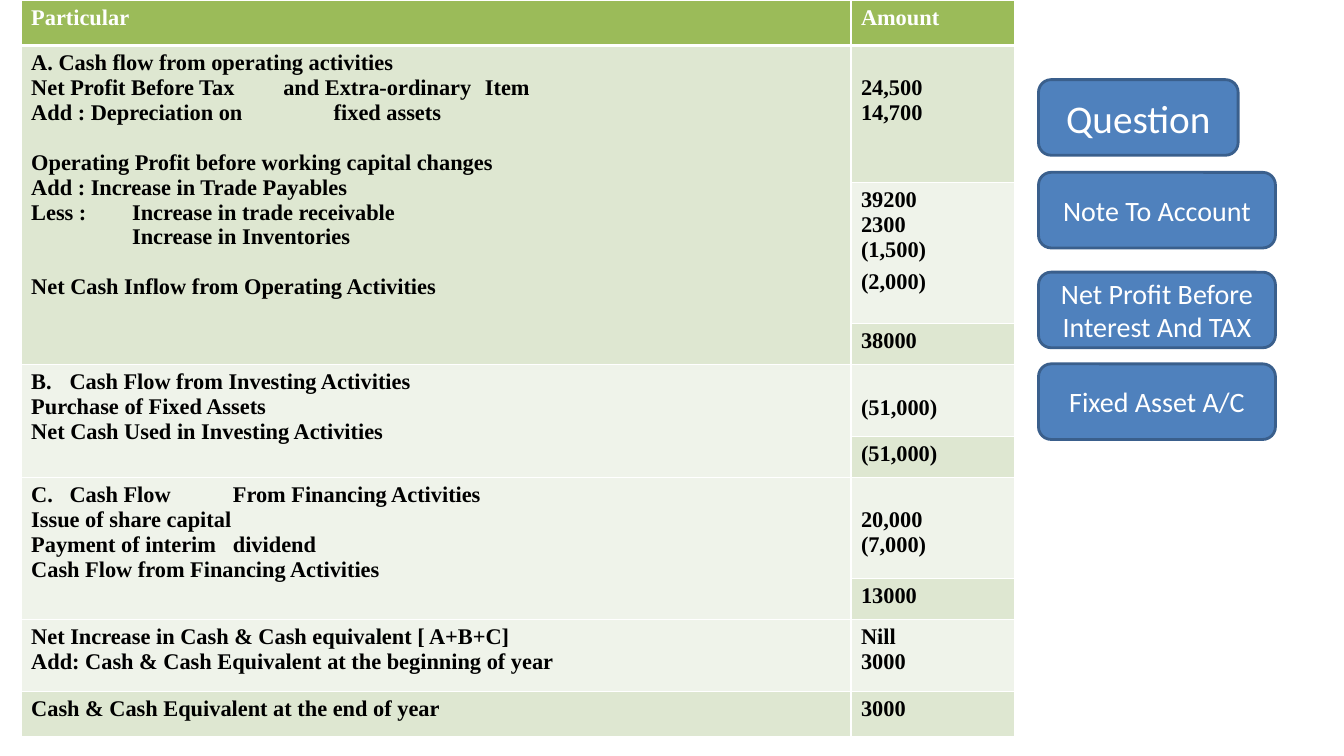
import pptx
import pptx.util
import pptx.dml.color
import pptx.enum.shapes
import pptx.enum.text
import pptx.oxml.ns
import lxml.etree

Inches = pptx.util.Inches
Pt = pptx.util.Pt
COLORS = {
    "header": "9BBB59", "dark": "DEE7D1", "light": "EFF3EA",
    "button": "4F81BD", "outline": "3A5F8C", "white": "FFFFFF", "black": "000000",
}
LINE_GAP = 18  # height of one skipped text line, in points


def color(name):
    return pptx.dml.color.RGBColor.from_string(COLORS[name])


def add_element(parent, tag, **attributes):
    element = lxml.etree.SubElement(parent, pptx.oxml.ns.qn(tag))
    for name, value in attributes.items():
        element.set(name, str(value))
    return element


presentation = pptx.Presentation()
presentation.slide_width = Inches(13.33)
presentation.slide_height = Inches(7.5)
slide = presentation.slides.add_slide(presentation.slide_layouts[6])

# Cash flow statement: row, column, rows spanned, fill, skipped lines on top, lines
# A line is its text plus optional settings: tabs (inches), before, after, number
CELLS = [
    (0, 0, 1, "header", 0, [("Particular", {})]),
    (0, 1, 1, "header", 0, [("Amount", {})]),
    (1, 0, 3, "dark", 0, [
        ("A. Cash flow from operating activities", {}),
        ("Net Profit Before Tax\tand Extra-ordinary\tItem", {"tabs": [2.5, 4.5]}),
        ("Add : Depreciation on\tfixed assets", {"tabs": [3]}),
        ("Operating Profit before working capital changes", {"before": LINE_GAP}),
        ("Add : Increase in Trade Payables", {}),
        ("Less :\tIncrease in trade receivable", {"tabs": [1]}),
        ("\tIncrease in Inventories", {"tabs": [1]}),
        ("Net Cash Inflow from Operating Activities", {"before": LINE_GAP}),
    ]),
    (1, 1, 1, "dark", 1, [("24,500", {}), ("14,700", {})]),
    (2, 1, 1, "light", 0, [("39200", {}), ("2300", {}),
                           ("(1,500)", {"after": 5.2}), ("(2,000)", {})]),
    (3, 1, 1, "dark", 0, [("38000", {})]),
    (4, 0, 2, "light", 0, [
        ("Cash Flow from Investing Activities", {"number": 2}),
        ("Purchase of Fixed Assets", {}),
        ("Net Cash Used in Investing Activities", {}),
    ]),
    (4, 1, 1, "light", 1, [("(51,000)", {})]),
    (5, 1, 1, "dark", 0, [("(51,000)", {})]),
    (6, 0, 2, "light", 0, [
        ("Cash Flow\tFrom Financing Activities", {"number": 3, "tabs": [2]}),
        ("Issue of share capital", {}),
        ("Payment of interim\tdividend", {"tabs": [2]}),
        ("Cash Flow from Financing Activities", {}),
    ]),
    (6, 1, 1, "light", 1, [("20,000", {}), ("(7,000)", {})]),
    (7, 1, 1, "dark", 0, [("13000", {})]),
    (8, 0, 1, "light", 0, [
        ("Net Increase in Cash & Cash equivalent [ A+B+C]", {}),
        ("Add: Cash & Cash Equivalent at the beginning of year", {}),
    ]),
    (8, 1, 1, "light", 0, [("Nill", {}), ("3000", {})]),
    (9, 0, 1, "dark", 0, [("Cash & Cash Equivalent at the end of year", {})]),
    (9, 1, 1, "dark", 0, [("3000", {})]),
]
ROW_HEIGHTS = [0.45, 1.36, 1.4, 0.41, 0.71, 0.41, 1, 0.41, 0.71, 0.45]
COLUMN_WIDTHS = [8.23, 1.62]

table = slide.shapes.add_table(
    len(ROW_HEIGHTS), len(COLUMN_WIDTHS), Inches(0.21), Inches(0),
    Inches(sum(COLUMN_WIDTHS)), Inches(sum(ROW_HEIGHTS))).table
table.horz_banding = False
for row, height in zip(table.rows, ROW_HEIGHTS):
    row.height = Inches(height)
for column, width in zip(table.columns, COLUMN_WIDTHS):
    column.width = Inches(width)

# White cell borders, thicker below the header
for row_index, row in enumerate(table.rows):
    for cell in row.cells:
        properties = cell._tc.get_or_add_tcPr()
        for side in ("L", "R", "T", "B"):
            thick = (row_index, side) in ((0, "B"), (1, "T"))
            border = add_element(properties, "a:ln" + side, w=Pt(3 if thick else 1))
            border_fill = add_element(border, "a:solidFill")
            add_element(border_fill, "a:srgbClr", val=COLORS["white"])

# Cell fills and text
for row_index, column_index, span, fill, skipped, lines in CELLS:
    cell = table.cell(row_index, column_index)
    if span > 1:
        cell.merge(table.cell(row_index + span - 1, column_index))
    for covered in range(row_index, row_index + span):
        covered_cell = table.cell(covered, column_index)
        covered_cell.fill.solid()
        covered_cell.fill.fore_color.rgb = color(fill)
    cell.margin_top = Inches(0.05) + Pt(LINE_GAP * skipped)
    for index, (text, settings) in enumerate(lines):
        text_frame = cell.text_frame
        paragraph = text_frame.add_paragraph() if index else text_frame.paragraphs[0]
        properties = paragraph._p.get_or_add_pPr()
        if "number" in settings:
            properties.set("marL", str(Inches(0.38)))
            properties.set("indent", str(Inches(-0.38)))
            add_element(properties, "a:buAutoNum", type="alphaUcPeriod",
                        startAt=settings["number"])
        if "tabs" in settings:
            tab_list = add_element(properties, "a:tabLst")
            for position in settings["tabs"]:
                add_element(tab_list, "a:tab", pos=Inches(position), algn="l")
        if "before" in settings:
            paragraph.space_before = Pt(settings["before"])
        if "after" in settings:
            paragraph.space_after = Pt(settings["after"])
        run = paragraph.add_run()
        run.text = text
        run.font.name = "Times New Roman"
        run.font.size = Pt(16)
        run.font.bold = True
        run.font.color.rgb = color("white" if fill == "header" else "black")

# Buttons on the right: text, top, width, text size
BUTTONS = [
    ("Question", 0.79, 1.98, 28),
    ("Note To Account", 1.71, 2.35, 20),
    ("Net Profit Before Interest And TAX", 2.7, 2.35, 20),
    ("Fixed Asset A/C", 3.61, 2.35, 20),
]
for text, top, width, size in BUTTONS:
    button = slide.shapes.add_shape(
        pptx.enum.shapes.MSO_SHAPE.ROUNDED_RECTANGLE,
        Inches(10.3), Inches(top), Inches(width), Inches(0.75))
    button.shadow.inherit = False
    button.fill.solid()
    button.fill.fore_color.rgb = color("button")
    button.line.color.rgb = color("outline")
    button.line.width = Pt(2)
    button.text_frame.word_wrap = True
    button.text_frame.vertical_anchor = pptx.enum.text.MSO_ANCHOR.MIDDLE
    paragraph = button.text_frame.paragraphs[0]
    paragraph.alignment = pptx.enum.text.PP_ALIGN.CENTER
    run = paragraph.add_run()
    run.text = text
    run.font.name = "Calibri"
    run.font.size = Pt(size)
    run.font.color.rgb = color("white")

presentation.save("out.pptx")
